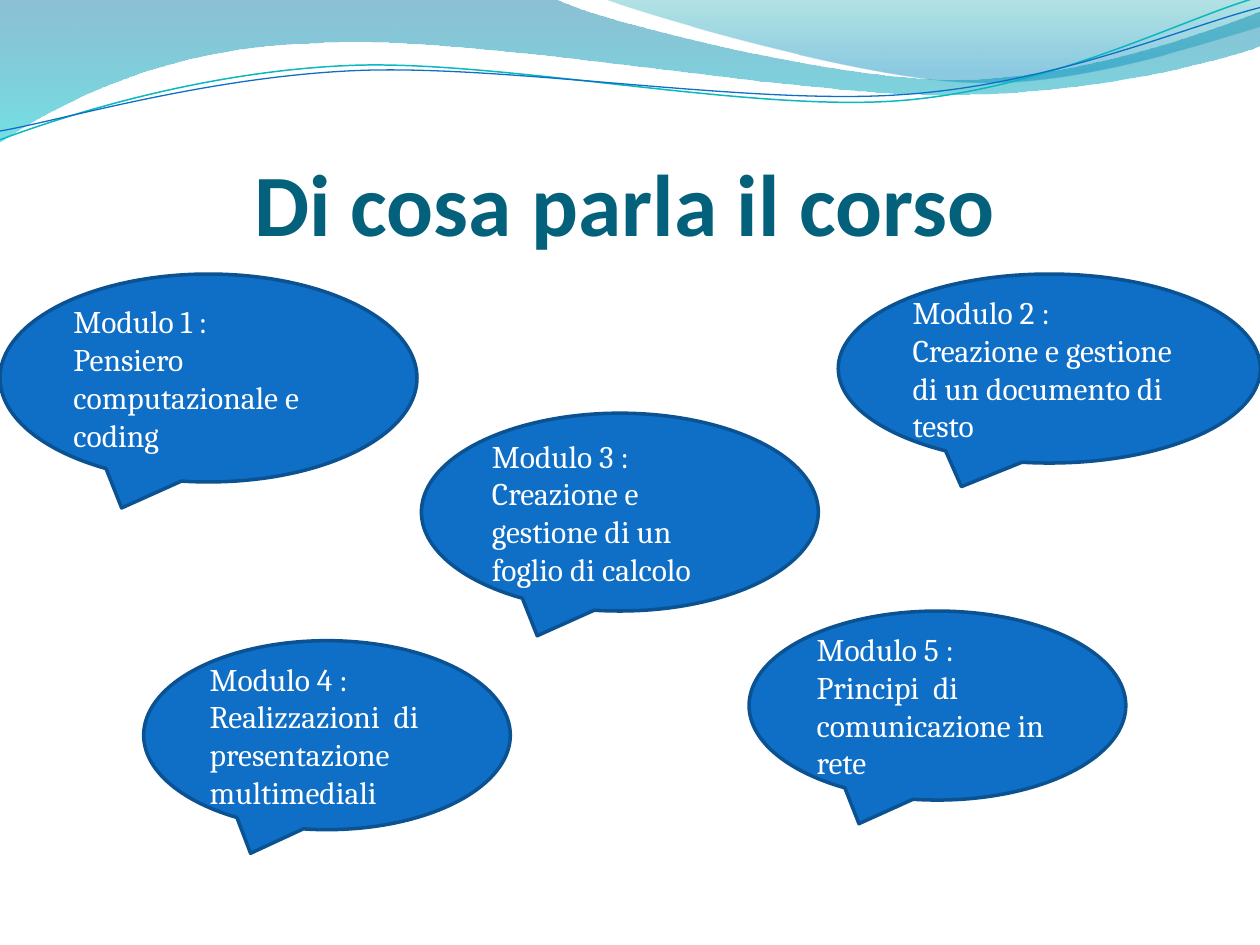
from math import cos, radians, sin

from lxml.etree import SubElement
from pptx import Presentation
from pptx.dml.color import RGBColor
from pptx.enum.shapes import MSO_SHAPE
from pptx.enum.text import MSO_ANCHOR, MSO_AUTO_SIZE, PP_ALIGN
from pptx.oxml.ns import qn
from pptx.util import Inches, Pt

WIDTH, HEIGHT = Inches(10), Inches(7.5)
COLS, ROWS = 1000, 750
FINE = 100
TILT = 2.7
HUES = {
    "title": "04617B", "text": "FFFFFF", "bubble": "0F6FC6", "edge": "0B5292",
    "teal": "0AB8BF", "navy": "0074A1", "aqua": "00C6CF", "sea": "00A1A9", "sky": "008BBF",
}
BUBBLES = [
    ((0, 217.5, 331, 165), "Modulo 1 :", "Pensiero computazionale e coding"),
    ((334.5, 328, 315, 157), "Modulo 3 :", "Creazione e gestione di un foglio di calcolo"),
    ((114, 508.5, 291, 150), "Modulo 4 :", "Realizzazioni  di  presentazione multimediali"),
    ((594.5, 485, 299, 150), "Modulo 5 :", "Principi  di comunicazione in rete"),
    ((665.3, 217.5, 335, 150), "Modulo 2 :", "Creazione e gestione di un documento di testo"),
]
WAVES = [
    ([(0, 0), (440, -1), (476, 17, 664, 63, 758, 63), (853, 63, 958, 26, 1000, 9),
      (1001, 36), (983, 44, 870, 76, 746, 75), (622, 75, 382, 28, 257, 34),
      (129, 36, 46, 83, -1, 113), (0, 0)], [("navy", 0, 45), ("aqua", 1, 55)]),
    ([(479, -1), (509, 11, 682, 62, 769, 65), (856, 69, 961, 32, 1000, 21),
      (1000, 0), (479, -1)], [("sea", 0, 30), ("sky", 0.8, 45)]),
]
LINES = [
    ([(0, 111), (48, 93, 158, 57, 277, 52), (395, 47, 593, 89, 713, 80),
      (833, 71, 938, 15, 998, -2)], (499, 57.5), "teal", 0.85),
    ([(0, 104), (47, 96, 164, 61, 283, 56), (403, 51, 597, 84, 717, 75),
      (836, 67, 941, 21, 1000, 6)], (499.5, 59), "bubble", 0.75),
]


def hue(name):
    """Return the named colour."""
    return RGBColor.from_string(HUES[name])


def place(shape, box):
    """Set a shape on the grid by column, row, width and height."""
    left, top, wide, high = box
    shape.left, shape.width = (int(WIDTH * n / COLS) for n in (left, wide))
    shape.top, shape.height = (int(HEIGHT * n / ROWS) for n in (top, high))


def pairs(part):
    """Split a flat tuple into points."""
    return list(zip(part[::2], part[1::2]))


def level(part, hub):
    """Turn the points of a part about a hub by the tilt."""
    c, s = cos(radians(TILT)), sin(radians(TILT))
    turned = []
    for x, y in pairs(part):
        dx, dy = x - hub[0], y - hub[1]
        turned += [hub[0] + dx * c - dy * s, hub[1] + dx * s + dy * c]
    return tuple(turned)


def outline(slide, parts, close):
    """Draw a freeform of straight lines and cubic curves."""
    first, *rest = [(x * FINE, y * FINE) for part in parts for x, y in pairs(part)]
    scale = (WIDTH / COLS / FINE, HEIGHT / ROWS / FINE)
    pen = slide.shapes.build_freeform(*first, scale=scale)
    pen.add_line_segments(rest, close=close)
    shape = pen.convert_to_shape()
    shape.shadow.inherit = False
    steps = iter(list(shape.element.iter(qn("a:lnTo"))))
    for part in parts[1:]:
        curve = next(steps)
        if len(part) == 6:
            bend = curve.makeelement(qn("a:cubicBezTo"))
            curve.addprevious(bend)
            for step in (curve, next(steps), next(steps)):
                bend.append(step[0])
                step.getparent().remove(step)
    return shape


def add_wave(slide, parts, stops):
    """Add a band with a see-through gradient running down."""
    shape = outline(slide, parts, True)
    shape.line.fill.background()
    shape.fill.gradient()
    shape.fill.gradient_angle = 270
    for stop, (name, spot, _) in zip(shape.fill.gradient_stops, stops):
        stop.color.rgb = hue(name)
        stop.position = spot
    tints = shape.element.spPr.iter(qn("a:srgbClr"))
    for tint, (_, _, share) in zip(tints, stops):
        SubElement(tint, qn("a:alpha")).set("val", str(share * 1000))


def add_line(slide, parts, hub, name, width):
    """Add a thin tilted curve."""
    shape = outline(slide, [level(part, hub) for part in parts], False)
    shape.rotation = -TILT
    shape.fill.background()
    shape.line.color.rgb = hue(name)
    shape.line.width = Pt(width)


def add_run(para, text, size, face, name, bold=False):
    """Add one formatted run."""
    run = para.add_run()
    run.text = text
    font = run.font
    font.size, font.name, font.bold = Pt(size), face, bold
    font.color.rgb = hue(name)


def add_bubble(slide, box, *lines):
    """Add a speech bubble with one paragraph per line."""
    shape = slide.shapes.add_shape(MSO_SHAPE.OVAL_CALLOUT, 0, 0, 0, 0)
    place(shape, box)
    shape.shadow.inherit = False
    shape.fill.solid()
    shape.fill.fore_color.rgb = hue("bubble")
    shape.line.color.rgb = hue("edge")
    shape.line.width = Pt(2)
    frame = shape.text_frame
    frame.word_wrap = True
    frame.vertical_anchor = MSO_ANCHOR.MIDDLE
    for i, line in enumerate(lines):
        para = frame.add_paragraph() if i else frame.paragraphs[0]
        para.alignment = PP_ALIGN.LEFT
        add_run(para, line, 18, "Cambria", "text")


def set_title(slide, text):
    """Fill the title and bring it to the front."""
    title = slide.shapes.title
    place(title, (50, 77, 908, 125))
    frame = title.text_frame
    frame.auto_size = MSO_AUTO_SIZE.NONE
    frame.vertical_anchor = MSO_ANCHOR.BOTTOM
    frame.margin_left = frame.margin_right = frame.margin_bottom = 0
    frame.margin_top = Inches(0.05)
    para = frame.paragraphs[0]
    para.alignment = PP_ALIGN.CENTER
    add_run(para, text, 50, "Calibri", "title", True)
    slide.shapes.element.append(title.element)


def main():
    """Build the course overview slide."""
    deck = Presentation()
    deck.slide_width, deck.slide_height = WIDTH, HEIGHT
    slide = deck.slides.add_slide(deck.slide_layouts[5])
    for wave in WAVES:
        add_wave(slide, *wave)
    for line in LINES:
        add_line(slide, *line)
    for bubble in BUBBLES:
        add_bubble(slide, *bubble)
    set_title(slide, "Di cosa parla il corso ")
    deck.save("out.pptx")


if __name__ == "__main__":
    main()
